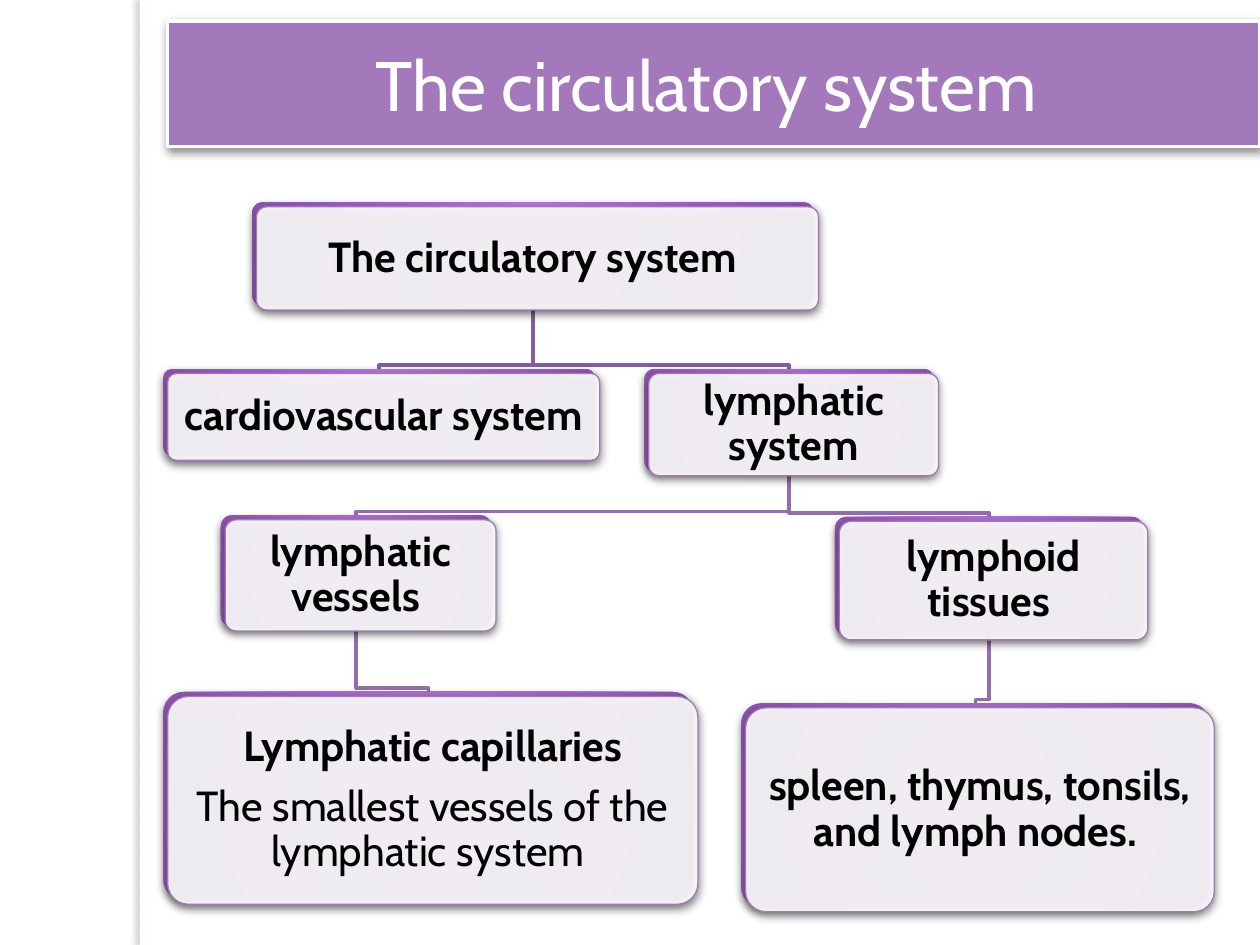
from lxml import etree
from pptx import Presentation
from pptx.dml.color import RGBColor
from pptx.enum.shapes import MSO_SHAPE
from pptx.enum.text import MSO_ANCHOR, PP_ALIGN
from pptx.oxml import parse_xml
from pptx.oxml.ns import nsdecls, qn
from pptx.util import Cm, Pt

RECT, ROUND = MSO_SHAPE.RECTANGLE, MSO_SHAPE.ROUNDED_RECTANGLE
MIDDLE, CENTER = MSO_ANCHOR.MIDDLE, PP_ALIGN.CENTER

FONT = "Cabin"
WHITE = RGBColor(0xFF, 0xFF, 0xFF)
BLACK = RGBColor(0, 0, 0)
GREY = RGBColor(0x64, 0x60, 0x68)
PURPLE = RGBColor(0xA3, 0x79, 0xBB)
LINK_TOP = RGBColor(0x83, 0x61, 0x96)
LINK_LOW = RGBColor(0x94, 0x6E, 0xAA)
GLOW = [
    (0, RGBColor(0xB2, 0x77, 0xD5)),
    (15, RGBColor(0xB1, 0x77, 0xD4)),
    (62, RGBColor(0x9D, 0x63, 0xC0)),
    (97, RGBColor(0x8C, 0x55, 0xAC)),
    (100, RGBColor(0x8A, 0x50, 0xAB)),
]

TITLE = "The circulatory system "
# name: (left, top, width, height in cm, [(text, bold)])
NODES = {
    "root": (5.08, 4.08, 11.33, 2.08, [("The circulatory system ", True)]),
    "cardio": (3.29, 7.44, 8.71, 1.75, [("cardiovascular system", True)]),
    "lymph": (12.99, 7.44, 5.84, 2.06, [("lymphatic system", True)]),
    "vessels": (4.45, 10.39, 5.46, 2.24, [("lymphatic vessels ", True)]),
    "small": (3.29, 13.95, 10.69, 4.19, [
        ("Lymphatic capillaries", True),
        ("The smallest vessels of the lymphatic system ", False),
    ]),
    "tissues": (16.83, 10.42, 6.22, 2.39, [("lymphoid tissues ", True)]),
    "organs": (14.94, 14.18, 9.45, 4.11,
               [("spleen, thymus, tonsils, and lymph nodes. ", True)]),
}
LINKS = [
    ("tissues", "organs", LINK_LOW),
    ("lymph", "tissues", LINK_LOW),
    ("vessels", "small", LINK_LOW),
    ("lymph", "vessels", LINK_LOW),
    ("root", "lymph", LINK_TOP),
    ("root", "cardio", LINK_TOP),
]
SHIFT = 0.09  # offset of each card from its backing
RISE = 0.08  # height of a link's bend above the child


def add_box(shapes, kind, left, top, width, height):
    box = shapes.add_shape(kind, Cm(left), Cm(top), Cm(width), Cm(height))
    box.shadow.inherit = False
    box.line.fill.background()
    if kind == ROUND:
        box.adjustments[0] = 0.1
    return box


def fill_solid(box, color):
    box.fill.solid()
    box.fill.fore_color.rgb = color


def set_line(shape, color, width):
    shape.line.color.rgb = color
    shape.line.width = Pt(width)


def cast(box, color=BLACK, alpha=43, blur=5, dist=2, angle=90):
    """Give the box an outer shadow."""
    box._element.spPr.find(qn("a:effectLst")).append(parse_xml(
        f'<a:outerShdw {nsdecls("a")} blurRad="{Pt(blur)}" dist="{Pt(dist)}" '
        f'dir="{angle * 60000}" rotWithShape="0"><a:srgbClr val="{color}">'
        f'<a:alpha val="{alpha * 1000}"/></a:srgbClr></a:outerShdw>'))


def fill_glow(box):
    """Fill the box with the radial gradient."""
    stops = "".join(
        f'<a:gs pos="{pos * 1000}"><a:srgbClr val="{color}"/></a:gs>'
        for pos, color in GLOW)
    box.fill.background()
    props = box._element.spPr
    props.replace(props.find(qn("a:noFill")), parse_xml(
        f'<a:gradFill {nsdecls("a")} rotWithShape="1"><a:gsLst>{stops}</a:gsLst>'
        '<a:path path="circle"><a:fillToRect l="50000" t="50000" r="50000" '
        'b="50000"/></a:path></a:gradFill>'))


def fade(box, alpha):
    color = box._element.spPr.find(qn("a:solidFill"))[0]
    etree.SubElement(color, qn("a:alpha")).set("val", str(alpha * 1000))


def write(box, lines, size, color):
    frame = box.text_frame
    frame.word_wrap = True
    frame.vertical_anchor = MIDDLE
    for i, (text, bold) in enumerate(lines):
        para = frame.add_paragraph() if i else frame.paragraphs[0]
        para.text = text
        para.alignment = CENTER
        font = para.font
        font.name, font.size, font.bold = FONT, Pt(size), bold
        font.color.rgb = color
    return frame


def add_link(shapes, parent, child, color):
    """Draw a bent line from the parent's base to the child's top."""
    left, top, width, height, _ = NODES[parent]
    x, y = left + width / 2, top + height
    left, end, width, _, _ = NODES[child]
    mid = left + width / 2
    path = shapes.build_freeform(Cm(x), Cm(y))
    bends = [(x, end - RISE), (mid, end - RISE), (mid, end)]
    path.add_line_segments([(Cm(a), Cm(b)) for a, b in bends], close=False)
    link = path.convert_to_shape()
    link.shadow.inherit = False
    link.fill.background()
    set_line(link, color, 2)


def add_node(shapes, left, top, width, height, lines):
    back = add_box(shapes, ROUND, left, top, width, height)
    fill_glow(back)
    cast(back)
    card = add_box(shapes, ROUND, left + SHIFT, top + SHIFT, width, height)
    fill_solid(card, WHITE)
    fade(card, 90)
    set_line(card, PURPLE, 0.75)
    cast(card)
    frame = write(card, lines, 24, BLACK)
    frame.margin_left = frame.margin_right = Cm(0.2)
    frame.margin_top = frame.margin_bottom = Cm(0.2)
    for para in frame.paragraphs:
        para.line_spacing = 0.9
        para.space_after = Pt(8.4)


def main():
    deck = Presentation()
    deck.slide_width, deck.slide_height = Cm(25.4), Cm(19.05)
    shapes = deck.slides.add_slide(deck.slide_layouts[6]).shapes

    strip = add_box(shapes, RECT, 2.82, 0, 0.2, 19.05)
    fill_solid(strip, WHITE)
    cast(strip, GREY, 25, 3, 3, 180)

    banner = add_box(shapes, RECT, 3.38, 0.42, 22.02, 2.54)
    fill_solid(banner, PURPLE)
    set_line(banner, WHITE, 2)
    cast(banner)
    write(banner, [(TITLE, False)], 40, WHITE)

    for link in LINKS:
        add_link(shapes, *link)
    for node in NODES.values():
        add_node(shapes, *node)
    deck.save("out.pptx")


if __name__ == "__main__":
    main()
